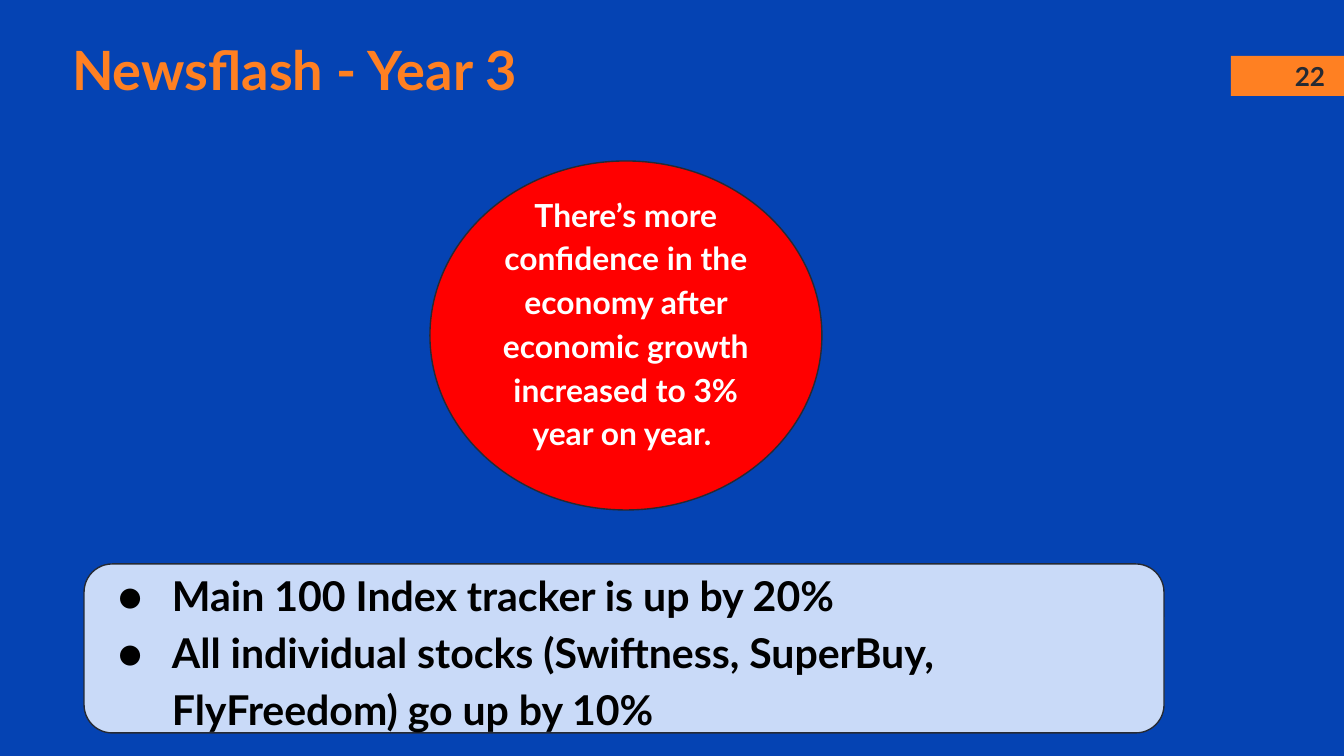
import pptx
import pptx.dml.color
import pptx.enum.shapes
import pptx.enum.text
import pptx.oxml
import pptx.oxml.ns
import pptx.util
from dataclasses import dataclass

TITLE = "Newsflash - Year 3"
NUMBER = "22"
NEWS = ("There’s more confidence in the economy after economic growth "
        "increased to 3% year on year. ")
EFFECTS = [
    "Main 100 Index tracker is up by 20%",
    "All individual stocks (Swiftness, SuperBuy, FlyFreedom) go up by 10%",
]


@dataclass(frozen=True)
class Theme:
    font: str = "Lato"
    background: str = "0543B3"
    accent: str = "FF8022"
    dark: str = "262A33"
    red: str = "FF0000"
    panel: str = "C9DAF8"
    white: str = "FFFFFF"
    black: str = "000000"
    title_size: int = 29
    list_size: int = 22
    news_size: int = 17
    number_size: int = 14
    line_width: float = 0.75
    spacing: float = 1.15


THEME = Theme()
ALIGN = pptx.enum.text.PP_ALIGN
ANCHOR = pptx.enum.text.MSO_ANCHOR
SHAPE = pptx.enum.shapes.MSO_SHAPE
EMU_PER_PX = 914400 / 134.4

SLIDE = (1344, 756)
TITLE_BOX = (72, 36, 1093, 114)
TAG_BOX = (1231, 56, 113, 40)
NUMBER_BOX = (1275, 56, 70, 40)
NEWS_BOX = (430, 161, 392, 349)
PANEL_BOX = (84, 564, 1080, 169)
PANEL_PAD = 21
INDENT, HANGING = 67, 54
NEWS_INSETS = (13, 0, 13, 29)


def px(n):
    return pptx.util.Emu(round(n * EMU_PER_PX))


def rgb(value):
    return pptx.dml.color.RGBColor.from_string(value)


def place(sp, box):
    sp.left, sp.top, sp.width, sp.height = map(px, box)


def add_shape(slide, kind, box, fill, line=None):
    sp = slide.shapes.add_shape(kind, *map(px, box))
    sp.shadow.inherit = False
    sp.fill.solid()
    sp.fill.fore_color.rgb = rgb(fill)
    if line:
        sp.line.color.rgb = rgb(line)
        sp.line.width = pptx.util.Pt(THEME.line_width)
    else:
        sp.line.fill.background()
    return sp


def add_bullet(p):
    pPr = p._p.get_or_add_pPr()
    pPr.set("marL", str(px(INDENT)))
    pPr.set("indent", str(-px(HANGING)))
    ns = pptx.oxml.ns.nsdecls("a")
    for xml in (f'<a:buClr {ns}><a:srgbClr val="{THEME.black}"/></a:buClr>',
                f'<a:buFont {ns} typeface="{THEME.font}"/>',
                f'<a:buChar {ns} char="●"/>'):
        pPr.append(pptx.oxml.parse_xml(xml))


def set_text(sp, *lines, size, color, align=ALIGN.LEFT, anchor=ANCHOR.MIDDLE,
             spacing=1.0, insets=(0, 0, 0, 0), bullets=False):
    tf = sp.text_frame
    tf.word_wrap = True
    tf.auto_size = pptx.enum.text.MSO_AUTO_SIZE.NONE
    tf.vertical_anchor = anchor
    tf.margin_left, tf.margin_top, tf.margin_right, tf.margin_bottom = map(px, insets)
    for i, line in enumerate(lines):
        p = tf.add_paragraph() if i else tf.paragraphs[0]
        if bullets:
            add_bullet(p)
        p.alignment = align
        p.line_spacing = spacing
        p.space_before = p.space_after = pptx.util.Pt(0)
        r = p.add_run()
        r.text = line
        r.font.name = THEME.font
        r.font.size = pptx.util.Pt(size)
        r.font.bold = True
        r.font.color.rgb = rgb(color)


def main():
    prs = pptx.Presentation()
    prs.slide_width, prs.slide_height = map(px, SLIDE)
    s = prs.slides.add_slide(prs.slide_layouts[1])
    s.background.fill.solid()
    s.background.fill.fore_color.rgb = rgb(THEME.background)

    add_shape(s, SHAPE.RECTANGLE, TAG_BOX, THEME.accent)
    number = s.shapes.add_textbox(*map(px, NUMBER_BOX))
    set_text(number, NUMBER, size=THEME.number_size, color=THEME.dark,
             align=ALIGN.CENTER)

    title = s.shapes.title
    place(title, TITLE_BOX)
    set_text(title, TITLE, size=THEME.title_size, color=THEME.accent,
             anchor=ANCHOR.TOP)

    news = add_shape(s, SHAPE.OVAL, NEWS_BOX, THEME.red, THEME.dark)
    set_text(news, NEWS, size=THEME.news_size, color=THEME.white,
             align=ALIGN.CENTER, spacing=THEME.spacing, insets=NEWS_INSETS)

    panel = add_shape(s, SHAPE.ROUNDED_RECTANGLE, PANEL_BOX, THEME.panel, THEME.dark)
    body = s.placeholders[1]
    x, y, w, h = PANEL_BOX
    place(body, (x + PANEL_PAD, y, w - 2 * PANEL_PAD, h))
    set_text(body, *EFFECTS, size=THEME.list_size, color=THEME.black,
             spacing=THEME.spacing, bullets=True)
    panel._element.addnext(body._element)  # keep the list in front of its panel

    prs.save("out.pptx")


if __name__ == "__main__":
    main()
